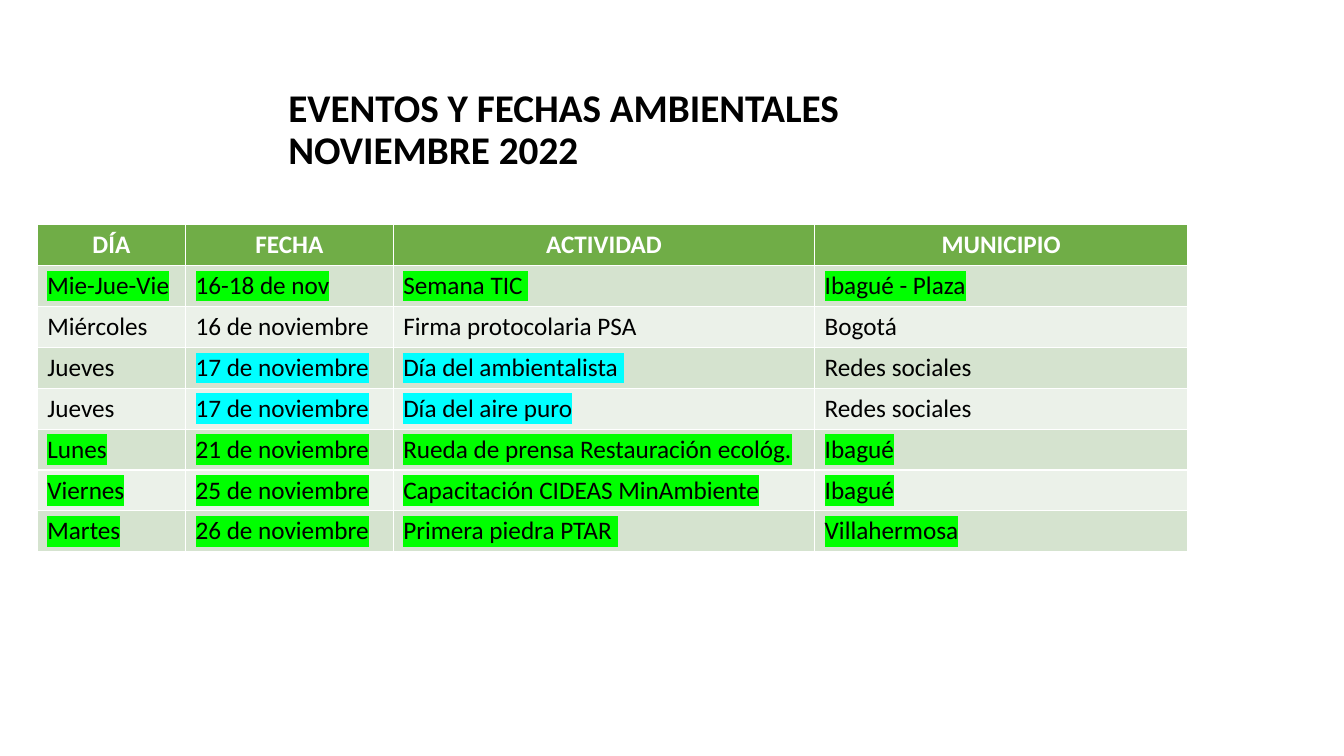
from dataclasses import dataclass

from lxml.etree import SubElement
from pptx import Presentation
from pptx.dml.color import RGBColor
from pptx.enum.text import MSO_ANCHOR, MSO_AUTO_SIZE, PP_ALIGN
from pptx.oxml.ns import qn
from pptx.util import Inches, Pt


@dataclass(frozen=True)
class Theme:
    font: str = "Calibri"
    head: str = "70AD47"
    bands: tuple = ("D5E3CF", "EBF1E9")
    dark: str = "000000"
    light: str = "FFFFFF"
    green: str = "00FF00"
    cyan: str = "00FFFF"
    title: int = 28
    body: int = 18


THEME = Theme()
TITLE = "EVENTOS Y FECHAS AMBIENTALES \vNOVIEMBRE 2022"
HEADS = ("DÍA", "FECHA", "ACTIVIDAD", "MUNICIPIO")
WIDTHS = (1.47, 2.06, 4.18, 3.7)
ROW = 0.4

# Highlight of each column, by kind of event
PLAIN = (None,) * 4
LOCAL = (THEME.green,) * 4
ONLINE = (None, THEME.cyan, THEME.cyan, None)

EVENTS = (
    (LOCAL, "Mie-Jue-Vie", "16-18 de nov", "Semana TIC ", "Ibagué - Plaza"),
    (PLAIN, "Miércoles", "16 de noviembre", "Firma protocolaria PSA", "Bogotá"),
    (ONLINE, "Jueves", "17 de noviembre", "Día del ambientalista ", "Redes sociales"),
    (ONLINE, "Jueves", "17 de noviembre", "Día del aire puro", "Redes sociales"),
    (LOCAL, "Lunes", "21 de noviembre", "Rueda de prensa Restauración ecológ.", "Ibagué"),
    (LOCAL, "Viernes", "25 de noviembre", "Capacitación CIDEAS MinAmbiente", "Ibagué"),
    (LOCAL, "Martes", "26 de noviembre", "Primera piedra PTAR ", "Villahermosa"),
)


def apply(item, **values):
    for name, value in values.items():
        setattr(item, name, value)


def style(font, size, color, bold):
    apply(font, name=THEME.font, size=Pt(size), bold=bold)
    font.color.rgb = RGBColor.from_string(color)


def mark(run, color):
    """Highlight a run; the element belongs right after the text fill."""
    props = run.font._element
    light = SubElement(props, qn("a:highlight"))
    SubElement(light, qn("a:srgbClr"), val=color)
    props.find(qn("a:solidFill")).addnext(light)


def add_title(slide):
    title = slide.shapes.title
    apply(title, left=Inches(2.76), top=Inches(0.91),
          width=Inches(9.55), height=Inches(0.78))
    frame = title.text_frame
    frame.text = TITLE
    apply(frame, vertical_anchor=MSO_ANCHOR.MIDDLE, word_wrap=True,
          auto_size=MSO_AUTO_SIZE.NONE)
    para = frame.paragraphs[0]
    apply(para, alignment=PP_ALIGN.LEFT, line_spacing=0.9)
    for run in para.runs:
        style(run.font, THEME.title, THEME.dark, True)


def fill_cell(cell, text, back, color, bold=False, align=PP_ALIGN.LEFT, light=None):
    cell.fill.solid()
    cell.fill.fore_color.rgb = RGBColor.from_string(back)
    para = cell.text_frame.paragraphs[0]
    para.alignment = align
    run = para.add_run()
    run.text = text
    style(run.font, THEME.body, color, bold)
    if light:
        mark(run, light)


def add_events(slide):
    count = len(EVENTS) + 1
    table = slide.shapes.add_table(
        count, len(HEADS), Inches(0.37), Inches(2.23),
        Inches(sum(WIDTHS)), Inches(ROW * count)).table
    for column, width in zip(table.columns, WIDTHS):
        column.width = Inches(width)
    # Header row
    for col, text in enumerate(HEADS):
        fill_cell(table.cell(0, col), text, THEME.head, THEME.light,
                  bold=True, align=PP_ALIGN.CENTER)
    # Banded event rows
    for row, (lights, *texts) in enumerate(EVENTS):
        back = THEME.bands[row % 2]
        for col, (text, light) in enumerate(zip(texts, lights)):
            fill_cell(table.cell(row + 1, col), text, back, THEME.dark, light=light)


def main():
    deck = Presentation()
    apply(deck, slide_width=Inches(13.33), slide_height=Inches(7.5))
    slide = deck.slides.add_slide(deck.slide_layouts.get_by_name("Title Only"))
    add_title(slide)
    add_events(slide)
    deck.save("out.pptx")


if __name__ == "__main__":
    main()
